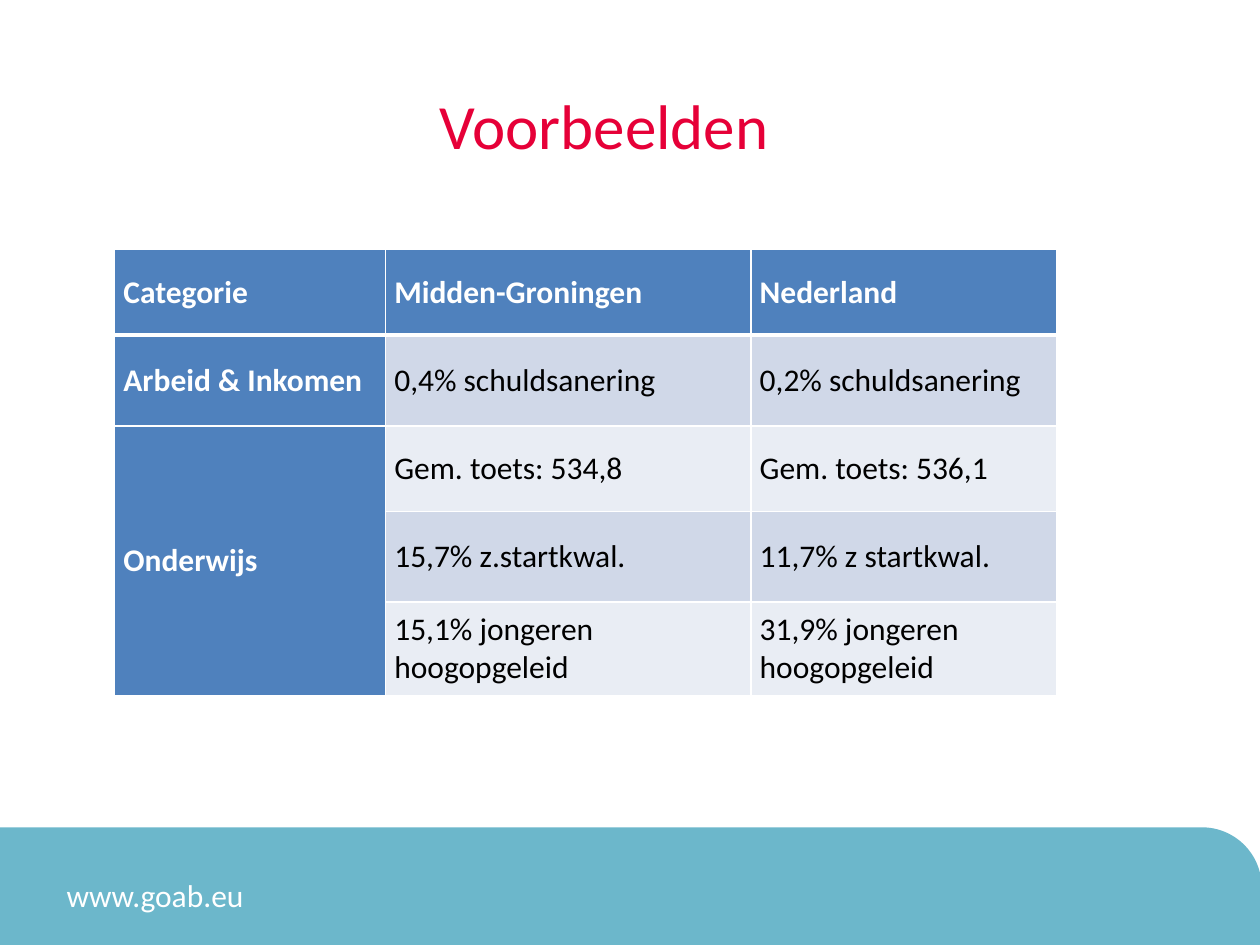
from lxml.etree import SubElement as Sub
from pptx import Presentation
from pptx.dml.color import RGBColor as RGB
from pptx.enum.shapes import MSO_SHAPE as Shape
from pptx.enum.text import MSO_ANCHOR as Anchor, PP_ALIGN as Align, MSO_AUTO_SIZE as Fit
from pptx.oxml.ns import qn
from pptx.util import Inches, Pt

WHITE = RGB(0xFF, 0xFF, 0xFF)
BLACK = RGB(0, 0, 0)
TEAL = RGB(0x6C, 0xB7, 0xCB)
RED = RGB(0xE6, 0x00, 0x38)
BLUE = RGB(0x4F, 0x81, 0xBD)
BANDS = [RGB(0xE9, 0xED, 0xF4), RGB(0xD0, 0xD8, 0xE8)]

COLS = [2.15, 2.9, 2.43]
ROWS = [0.68, 0.72, 0.68, 0.72, 0.74]
DATA = [
    ["Categorie", "Midden-Groningen", "Nederland"],
    ["Arbeid & Inkomen", "0,4% schuldsanering", "0,2% schuldsanering"],
    ["Onderwijs", "Gem. toets: 534,8", "Gem. toets: 536,1"],
    ["", "15,7% z.startkwal.", "11,7% z startkwal."],
    ["", "15,1% jongeren hoogopgeleid", "31,9% jongeren hoogopgeleid"],
]


def assign(item, values):
    for name, value in values.items():
        setattr(item, name, value)


def write(frame, text, size, color, bold=False, align=Align.LEFT):
    para = frame.paragraphs[0]
    para.alignment = align
    run = para.add_run()
    run.text = text
    assign(run.font, {"name": "Calibri", "size": Pt(size), "bold": bold})
    run.font.color.rgb = color


def add_title(slide, left, top, width, height):
    title = slide.shapes.title
    assign(title, {"left": Inches(left), "top": Inches(top),
                   "width": Inches(width), "height": Inches(height)})
    assign(title.text_frame, {"vertical_anchor": Anchor.MIDDLE, "word_wrap": True})
    write(title.text_frame, "Voorbeelden ", 36, RED, align=Align.CENTER)


def add_footer(slide, left, top, width, height):
    # Band with one round corner
    band = slide.shapes.add_shape(Shape.ROUND_1_RECTANGLE, Inches(left), Inches(top),
                                  Inches(width), Inches(height))
    band.adjustments[0] = 0.5
    band.shadow.inherit = False
    band.fill.solid()
    band.fill.fore_color.rgb = band.line.color.rgb = TEAL
    band.line.width = Pt(2)
    # Web address
    box = slide.shapes.add_textbox(Inches(left + 0.43), Inches(top + 0.32),
                                   Inches(2.05), Inches(0.4))
    assign(box.text_frame, {"word_wrap": True, "auto_size": Fit.SHAPE_TO_FIT_TEXT})
    write(box.text_frame, "www.goab.eu", 18, WHITE)


def add_edges(cell, base):
    props = cell._tc.get_or_add_tcPr()
    for side, width in {"L": 1, "R": 1, "T": 1, "B": base}.items():
        line = Sub(props, qn(f"a:ln{side}"), w=str(Pt(width)))
        Sub(Sub(line, qn("a:solidFill")), qn("a:srgbClr"), val=str(WHITE))


def add_grid(slide, left, top, width, height):
    table = slide.shapes.add_table(len(DATA), len(COLS), Inches(left), Inches(top),
                                   Inches(width), Inches(height)).table
    for part, size in zip(table.columns, COLS):
        part.width = Inches(size)
    for part, size in zip(table.rows, ROWS):
        part.height = Inches(size)
    table.cell(2, 0).merge(table.cell(4, 0))

    for r, row in enumerate(DATA):
        for c, text in enumerate(row):
            cell = table.cell(r, c)
            head = r == 0 or c == 0
            assign(cell, {"vertical_anchor": Anchor.MIDDLE,
                          "margin_left": Inches(0.07), "margin_right": Inches(0.07),
                          "margin_top": 0, "margin_bottom": 0})
            add_edges(cell, 3 if r == 0 else 1)
            cell.fill.solid()
            cell.fill.fore_color.rgb = BLUE if head else BANDS[r % 2]
            if text:
                write(cell.text_frame, text, 18, WHITE if head else BLACK, head)


def main():
    deck = Presentation()
    assign(deck, {"slide_width": Inches(10), "slide_height": Inches(7.5)})
    slide = deck.slides.add_slide(deck.slide_layouts[5])
    add_footer(slide, 0, 6.58, 10, 0.92)
    add_title(slide, 0.35, 0.63, 9, 0.72)
    add_grid(slide, 0.91, 1.98, sum(COLS), sum(ROWS))
    deck.save("out.pptx")


if __name__ == "__main__":
    main()
